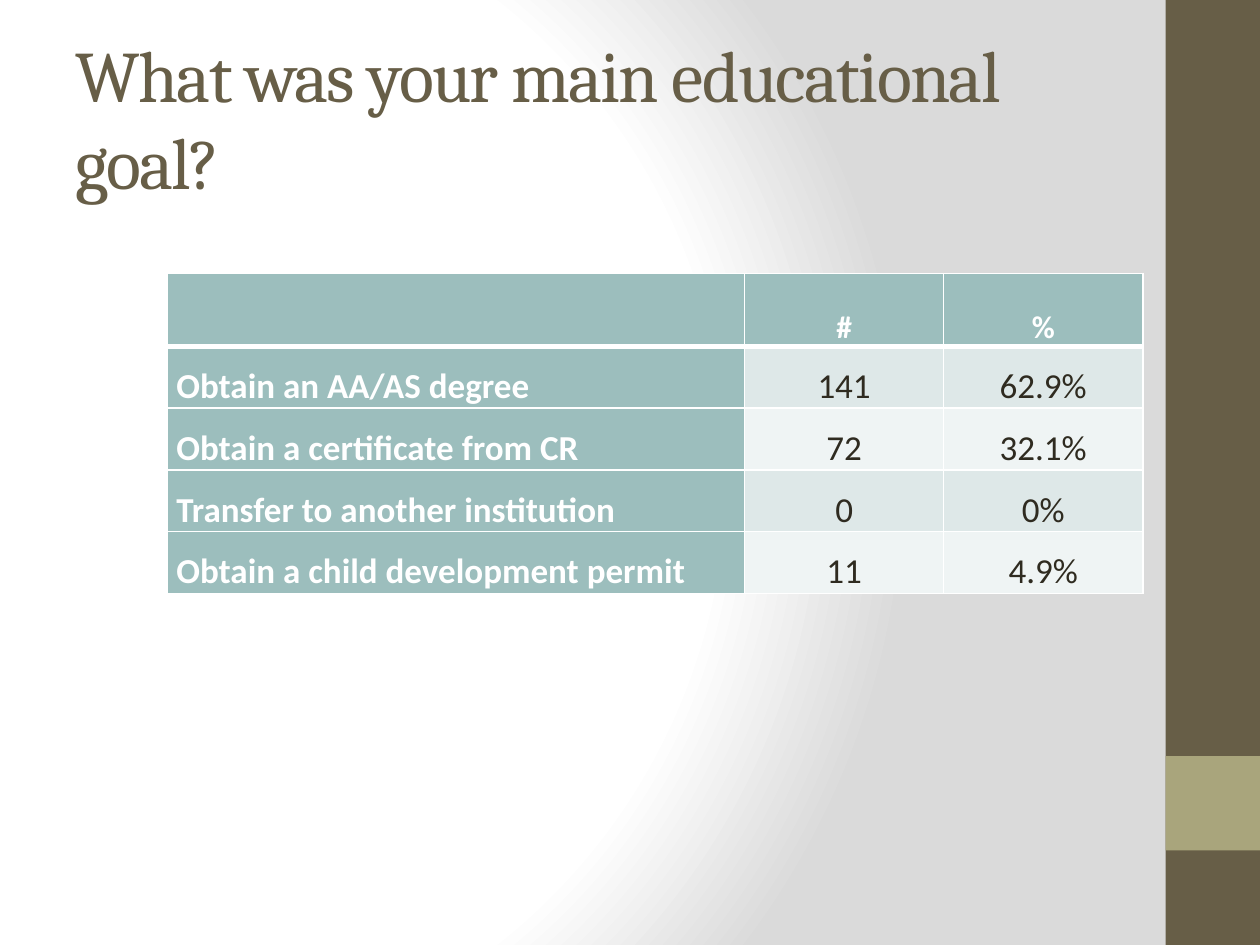
from pptx import Presentation, util as u
from pptx.dml.color import RGBColor
from pptx.enum import shapes, text
from pptx.oxml import parse_xml
from pptx.oxml.ns import nsdecls

WIDE, HIGH = 10, 7.5
BAR = 0.75
BROWN, OLIVE, TEAL, WHITE, INK = "675E47", "A9A57C", "9CBEBD", "FFFFFF", "2F2B20"
BANDS = ["DEE8E8", "EFF4F4"]
COLS = [4.58, 1.58, 1.58]
HEAD, ROW = 0.58, 0.49
DATA = [
    ["", "#", "%"],
    ["Obtain an AA/AS degree", "141", "62.9%"],
    ["Obtain a certificate from CR", "72", "32.1%"],
    ["Transfer to another institution", "0", "0%"],
    ["Obtain a child development permit", "11", "4.9%"],
]


def color(code):
    return RGBColor.from_string(code)


def paint(item, code):
    item.fill.solid()
    item.fill.fore_color.rgb = color(code)


def style(para, name, size, code, bold=False):
    font = para.font
    font.name, font.size, font.bold = name, u.Pt(size), bold
    font.color.rgb = color(code)


def add_back(slide):
    stops = "".join(
        f'<a:gs pos="{pos * 1000}"><a:srgbClr val="{code}"/></a:gs>'
        for pos, code in [(0, WHITE), (75, WHITE), (100, "DADADA")]
    )
    slide.element.cSld.insert(0, parse_xml(
        f'<p:bg {nsdecls("p", "a")}><p:bgPr><a:gradFill rotWithShape="1">'
        f'<a:gsLst>{stops}</a:gsLst><a:path path="circle">'
        '<a:fillToRect l="20000" t="50000" r="100000" b="50000"/></a:path>'
        '</a:gradFill><a:effectLst/></p:bgPr></p:bg>'
    ))


def add_block(slide, top, high, code):
    box = slide.shapes.add_shape(
        shapes.MSO_SHAPE.RECTANGLE,
        u.Inches(WIDE - BAR), u.Inches(top), u.Inches(BAR), u.Inches(high),
    )
    box.shadow.inherit = False
    paint(box, code)
    box.line.fill.background()


def set_title(slide, words):
    title = slide.shapes.title
    title.left, title.top = u.Inches(0.5), u.Inches(0.3)
    title.width, title.height = u.Inches(8.33), u.Inches(1.25)
    frame = title.text_frame
    frame.text = words
    frame.auto_size = text.MSO_AUTO_SIZE.NONE
    frame.vertical_anchor = text.MSO_ANCHOR.MIDDLE
    para = frame.paragraphs[0]
    para.alignment = text.PP_ALIGN.LEFT
    style(para, "Cambria", 41.4, BROWN)
    para.runs[0].font._element.set("spc", "-100")


def add_edges(cell, top, low):
    props = cell._tc.get_or_add_tcPr()
    for side, size in zip("LRTB", [1, 1, top, low]):
        props.append(parse_xml(
            f'<a:ln{side} {nsdecls("a")} w="{u.Pt(size)}"><a:solidFill>'
            f'<a:srgbClr val="{WHITE}"/></a:solidFill></a:ln{side}>'
        ))


def fill_cell(cell, words, row, col):
    lead = row == 0 or col == 0
    add_edges(cell, 3 if row == 1 else 1, 3 if row == 0 else 1)
    paint(cell, TEAL if lead else BANDS[(row - 1) % 2])
    cell.vertical_anchor = text.MSO_ANCHOR.BOTTOM
    cell.margin_left = cell.margin_right = u.Inches(0.07)
    cell.margin_top = cell.margin_bottom = 0
    cell.text = words
    para = cell.text_frame.paragraphs[0]
    para.alignment = text.PP_ALIGN.CENTER if col else text.PP_ALIGN.LEFT
    style(para, "Calibri", 20 if row else 18, WHITE if lead else INK, lead)


def add_grid(slide):
    highs = [HEAD] + [ROW] * (len(DATA) - 1)
    table = slide.shapes.add_table(
        len(DATA), len(COLS), u.Inches(1.33), u.Inches(2.17),
        u.Inches(sum(COLS)), u.Inches(sum(highs)),
    ).table
    for col, wide in zip(table.columns, COLS):
        col.width = u.Inches(wide)
    for row, high in zip(table.rows, highs):
        row.height = u.Inches(high)
    for i, line in enumerate(DATA):
        for j, words in enumerate(line):
            fill_cell(table.cell(i, j), words, i, j)


def main():
    deck = Presentation()
    deck.slide_width, deck.slide_height = u.Inches(WIDE), u.Inches(HIGH)
    slide = deck.slides.add_slide(deck.slide_layouts[5])
    add_back(slide)
    add_block(slide, 0, HIGH, BROWN)
    add_block(slide, HIGH * 0.8, BAR, OLIVE)
    set_title(slide, "What was your main educational goal?")
    add_grid(slide)
    deck.save("out.pptx")


if __name__ == "__main__":
    main()
